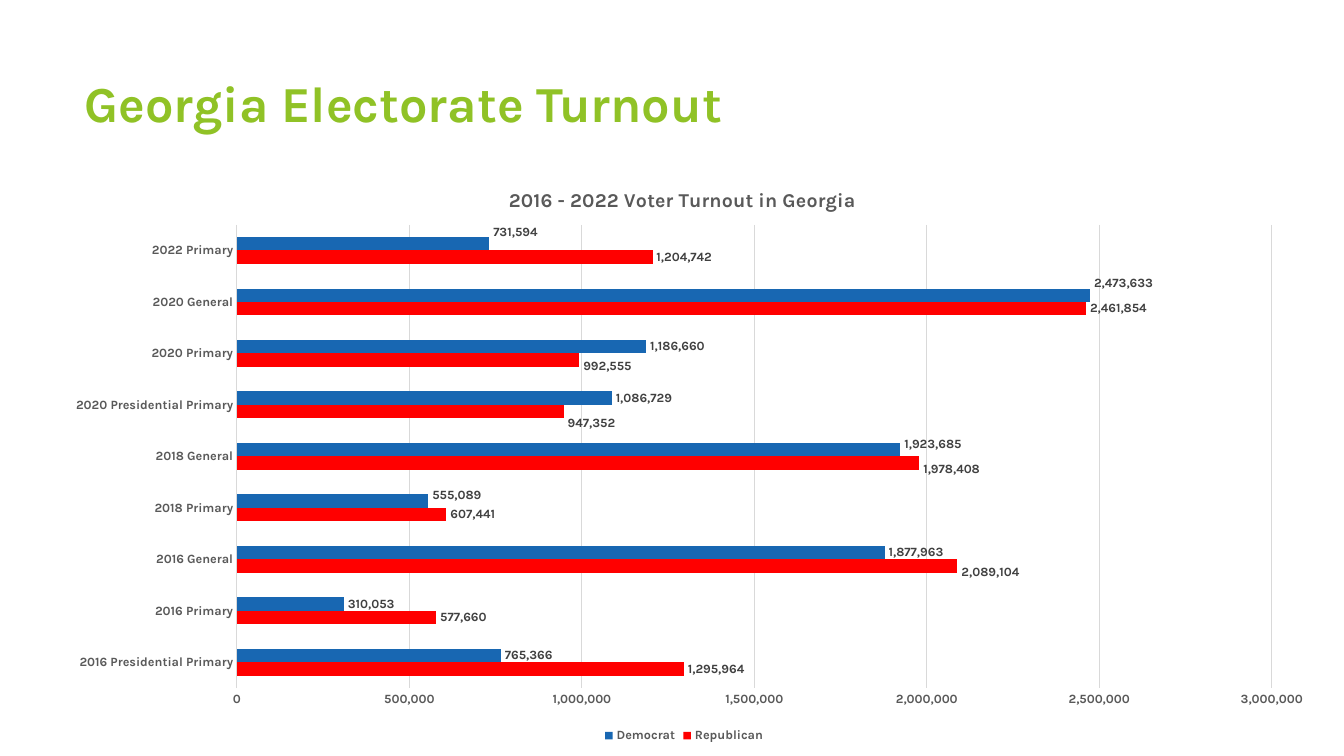
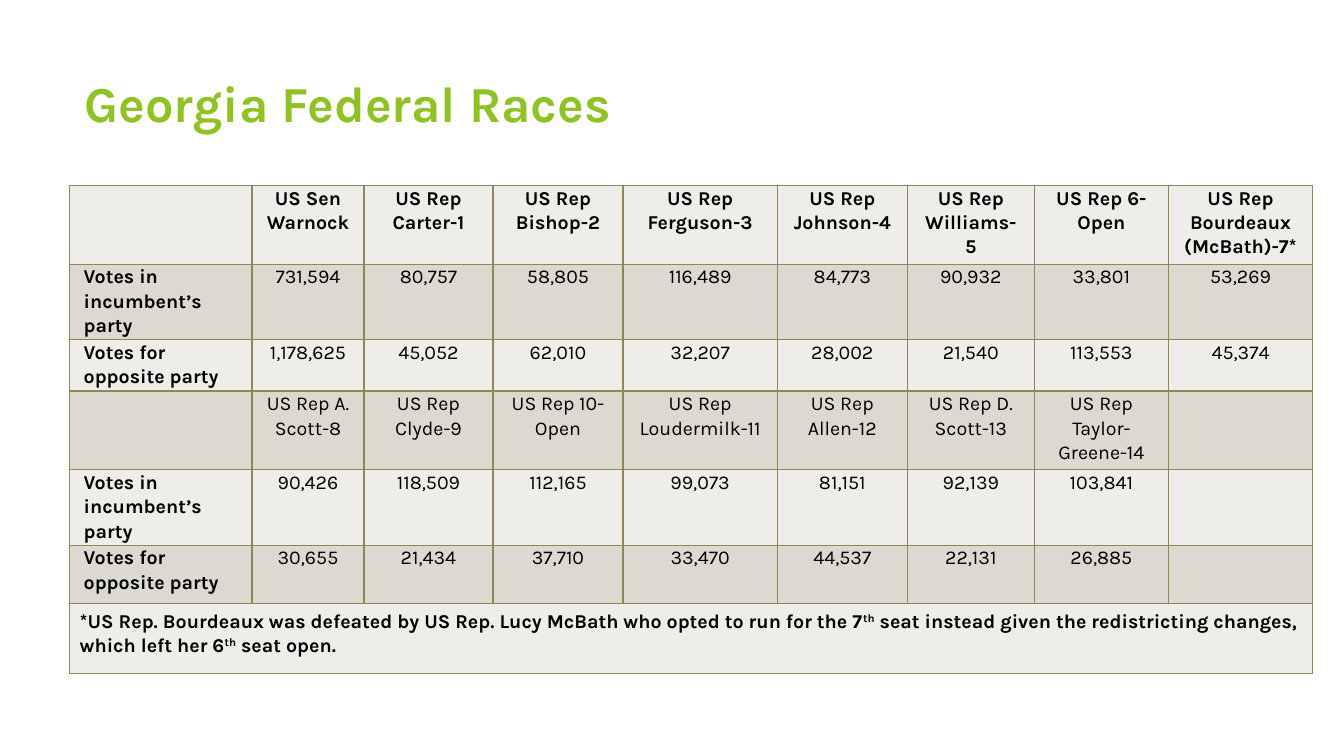
import dataclasses

import lxml.etree
import pptx
import pptx.chart.data
import pptx.dml.color
import pptx.enum.chart
import pptx.enum.text
import pptx.oxml.ns
import pptx.util

Inches = pptx.util.Inches
qn = pptx.oxml.ns.qn


@dataclasses.dataclass(frozen=True)
class Theme:
    font: str = "Karla"
    title: str = "90C226"
    ink: str = "000000"
    muted: str = "595959"
    label: str = "404040"
    grid: str = "D9D9D9"
    border: str = "918655"
    light: str = "EEEDE9"
    dark: str = "DCD9D1"
    republican: str = "FF0000"
    democrat: str = "1867B2"
    title_size: int = 36
    body_size: int = 14
    chart_size: int = 9


THEME = Theme()

ELECTIONS = [
    "2016 Presidential Primary", "2016 Primary", "2016 General",
    "2018 Primary", "2018 General", "2020 Presidential Primary",
    "2020 Primary", "2020 General", "2022 Primary",
]
TURNOUT = [
    ("Republican", THEME.republican,
     [1295964, 577660, 2089104, 607441, 1978408, 947352, 992555, 2461854, 1204742],
     {2: 0.01, 4: 0.01, 5: 0.02, 6: 0.01}),
    ("Democrat", THEME.democrat,
     [765366, 310053, 1877963, 555089, 1923685, 1086729, 1186660, 2473633, 731594],
     {3: -0.01, 4: -0.01, 7: -0.02, 8: -0.02}),
]

INCUMBENT = "Votes in incumbent’s party"
OPPOSITE = "Votes for opposite party"
RACES = [
    ["", "US Sen Warnock", "US Rep Carter-1", "US Rep Bishop-2", "US Rep Ferguson-3",
     "US Rep Johnson-4", "US Rep Williams-5", "US Rep 6-Open",
     "US Rep Bourdeaux (McBath)-7*"],
    [INCUMBENT, "731,594", "80,757", "58,805", "116,489", "84,773", "90,932",
     "33,801", "53,269"],
    [OPPOSITE, "1,178,625", "45,052", "62,010", "32,207", "28,002", "21,540",
     "113,553", "45,374"],
    ["", "US Rep A. Scott-8", "US Rep Clyde-9", "US Rep 10-Open",
     "US Rep Loudermilk-11", "US Rep Allen-12", "US Rep D. Scott-13",
     "US Rep Taylor-Greene-14", ""],
    [INCUMBENT, "90,426", "118,509", "112,165", "99,073", "81,151", "92,139",
     "103,841", ""],
    [OPPOSITE, "30,655", "21,434", "37,710", "33,470", "44,537", "22,131",
     "26,885", ""],
]
FOOTNOTE = [
    "*US Rep. Bourdeaux was defeated by US Rep. Lucy McBath who opted to run for the 7",
    "th",
    " seat instead given the redistricting changes, which left her 6",
    "th",
    " seat open.",
]
COLUMN_WIDTHS = [1.81, 1.11, 1.28, 1.29, 1.53, 1.29, 1.26, 1.33, 1.43]
ROW_HEIGHTS = [0.78, 0.59, 0.51, 0.78, 0.56, 0.58, 0.69]


def rgb(color):
    return pptx.dml.color.RGBColor.from_string(color)


def style_font(font, size, color, bold):
    font.name = THEME.font
    font.size = pptx.util.Pt(size)
    font.bold = bold
    font.color.rgb = rgb(color)


def write(para, text, *, size=THEME.body_size, color=THEME.ink, bold=False, raised=False):
    span = para.add_run()
    span.text = text
    style_font(span.font, size, color, bold)
    if raised:
        span._r.get_or_add_rPr().set("baseline", "30000")


def place(parent, index, **settings):
    for old in parent.findall(qn("c:layout")):
        parent.remove(old)
    layout = lxml.etree.Element(qn("c:layout"))
    manual = lxml.etree.SubElement(layout, qn("c:manualLayout"))
    for name, value in settings.items():
        lxml.etree.SubElement(manual, qn("c:" + name)).set("val", str(value))
    parent.insert(index, layout)


class Pages:
    """Build slides that share one theme."""

    def __init__(self, theme):
        self.theme = theme
        self.deck = pptx.Presentation()
        self.deck.slide_width = Inches(13.33)
        self.deck.slide_height = Inches(7.5)
        self.page = None

    def add_page(self, title):
        self.page = self.deck.slides.add_slide(self.deck.slide_layouts[6])
        box = self.page.shapes.add_textbox(Inches(0.74), Inches(0.67), Inches(9.4), Inches(1.44))
        box.text_frame.word_wrap = True
        write(box.text_frame.paragraphs[0], title, size=self.theme.title_size,
              color=self.theme.title, bold=True)

    def add_bar_chart(self, title, categories, series_list, left, top, width, height):
        theme = self.theme
        data = pptx.chart.data.CategoryChartData(number_format="#,##0")
        data.categories = categories
        for name, _, values, _ in series_list:
            data.add_series(name, values)
        chart = self.page.shapes.add_chart(
            pptx.enum.chart.XL_CHART_TYPE.BAR_CLUSTERED, Inches(left), Inches(top),
            Inches(width), Inches(height), data).chart
        style_font(chart.font, theme.chart_size, theme.muted, True)
        chart.has_title = True
        write(chart.chart_title.text_frame.paragraphs[0], title, color=theme.muted, bold=True)
        chart.has_legend = True
        chart.legend.position = pptx.enum.chart.XL_LEGEND_POSITION.BOTTOM
        chart.legend.include_in_layout = False
        style_font(chart.legend.font, theme.chart_size, theme.muted, True)
        self.style_axes(chart)
        chart.plots[0].gap_width = 182
        chart.plots[0].overlap = 0
        chart.plots[0].vary_by_categories = False
        for series, (_, color, _, shifts) in zip(chart.plots[0].series, series_list):
            self.style_series(series, color, shifts)
        shifts = [shift for entry in series_list for shift in entry[3].values()]
        for label, shift in zip(chart.element.iter(qn("c:dLbl")), shifts):
            place(label, 1, x=0, y=shift)
        root = chart.element.find(qn("c:chart"))
        place(root.find(qn("c:title")), 1, xMode="edge", yMode="edge", x=0.36, y=0.04)
        place(root.find(qn("c:plotArea")), 0, layoutTarget="inner", xMode="edge",
              yMode="edge", x=0.15, y=0.11, w=0.81, h=0.79)

    def style_axes(self, chart):
        theme = self.theme
        none = pptx.enum.chart.XL_TICK_MARK.NONE
        for axis in (chart.category_axis, chart.value_axis):
            axis.major_tick_mark = none
            axis.minor_tick_mark = none
            style_font(axis.tick_labels.font, theme.chart_size, theme.muted, True)
        values = chart.value_axis
        values.minimum_scale, values.maximum_scale, values.major_unit = 0, 3000000, 500000
        values.tick_labels.number_format = "#,##0"
        values.tick_labels.number_format_is_linked = False
        values.format.line.fill.background()
        for line in (chart.category_axis.format.line, values.major_gridlines.format.line):
            line.color.rgb = rgb(theme.grid)
            line.width = pptx.util.Pt(0.75)

    def style_series(self, series, color, shifts):
        series.format.fill.solid()
        series.format.fill.fore_color.rgb = rgb(color)
        series.invert_if_negative = False
        series.data_labels.show_value = True
        series.data_labels.number_format = "#,##0"
        series.data_labels.number_format_is_linked = False
        moved = [series.points[index].data_label for index in shifts]
        for label in [series.data_labels, *moved]:
            label.position = pptx.enum.chart.XL_LABEL_POSITION.OUTSIDE_END
            style_font(label.font, self.theme.chart_size, self.theme.label, True)

    def add_races_table(self, rows, footnote, left, top, widths, heights):
        table = self.page.shapes.add_table(
            len(heights), len(widths), Inches(left), Inches(top),
            Inches(sum(widths)), Inches(sum(heights))).table
        table.first_row = table.horz_banding = False
        for column, width in zip(table.columns, widths):
            column.width = Inches(width)
        for index, (row, height) in enumerate(zip(table.rows, heights)):
            row.height = Inches(height)
            for cell in row.cells:
                self.style_cell(cell, self.theme.dark if index % 2 else self.theme.light)
        for row_index, texts in enumerate(rows):
            for column_index, text in enumerate(texts):
                if text:
                    self.fill_cell(table.cell(row_index, column_index), [text],
                                   bold=row_index == 0 or column_index == 0,
                                   centered=column_index > 0)
        note = table.cell(len(rows), 0)
        note.merge(table.cell(len(rows), len(widths) - 1))
        self.fill_cell(note, footnote, bold=True, margins=(0.1, 0.05))

    def style_cell(self, cell, color):
        properties = cell._tc.get_or_add_tcPr()
        for side in ("a:lnL", "a:lnR", "a:lnT", "a:lnB"):
            line = lxml.etree.SubElement(properties, qn(side), w=str(pptx.util.Pt(1)))
            fill = lxml.etree.SubElement(line, qn("a:solidFill"))
            lxml.etree.SubElement(fill, qn("a:srgbClr"), val=self.theme.border)
        cell.fill.solid()
        cell.fill.fore_color.rgb = rgb(color)

    def fill_cell(self, cell, texts, bold=False, centered=False, margins=(0.14, 0)):
        cell.margin_left = cell.margin_right = Inches(margins[0])
        cell.margin_top = cell.margin_bottom = Inches(margins[1])
        para = cell.text_frame.paragraphs[0]
        para.line_spacing = 1.07
        if centered:
            para.alignment = pptx.enum.text.PP_ALIGN.CENTER
        for text in texts:
            write(para, text, bold=bold, raised=text == "th")


def main():
    pages = Pages(THEME)
    pages.add_page("Georgia Electorate Turnout")
    pages.add_bar_chart("2016 - 2022 Voter Turnout in Georgia", ELECTIONS, TURNOUT,
                        0.45, 1.59, 12.67, 5.82)
    pages.add_page("Georgia Federal Races")
    pages.add_races_table(RACES, FOOTNOTE, 0.69, 1.84, COLUMN_WIDTHS, ROW_HEIGHTS)
    pages.deck.save("out.pptx")


if __name__ == "__main__":
    main()
